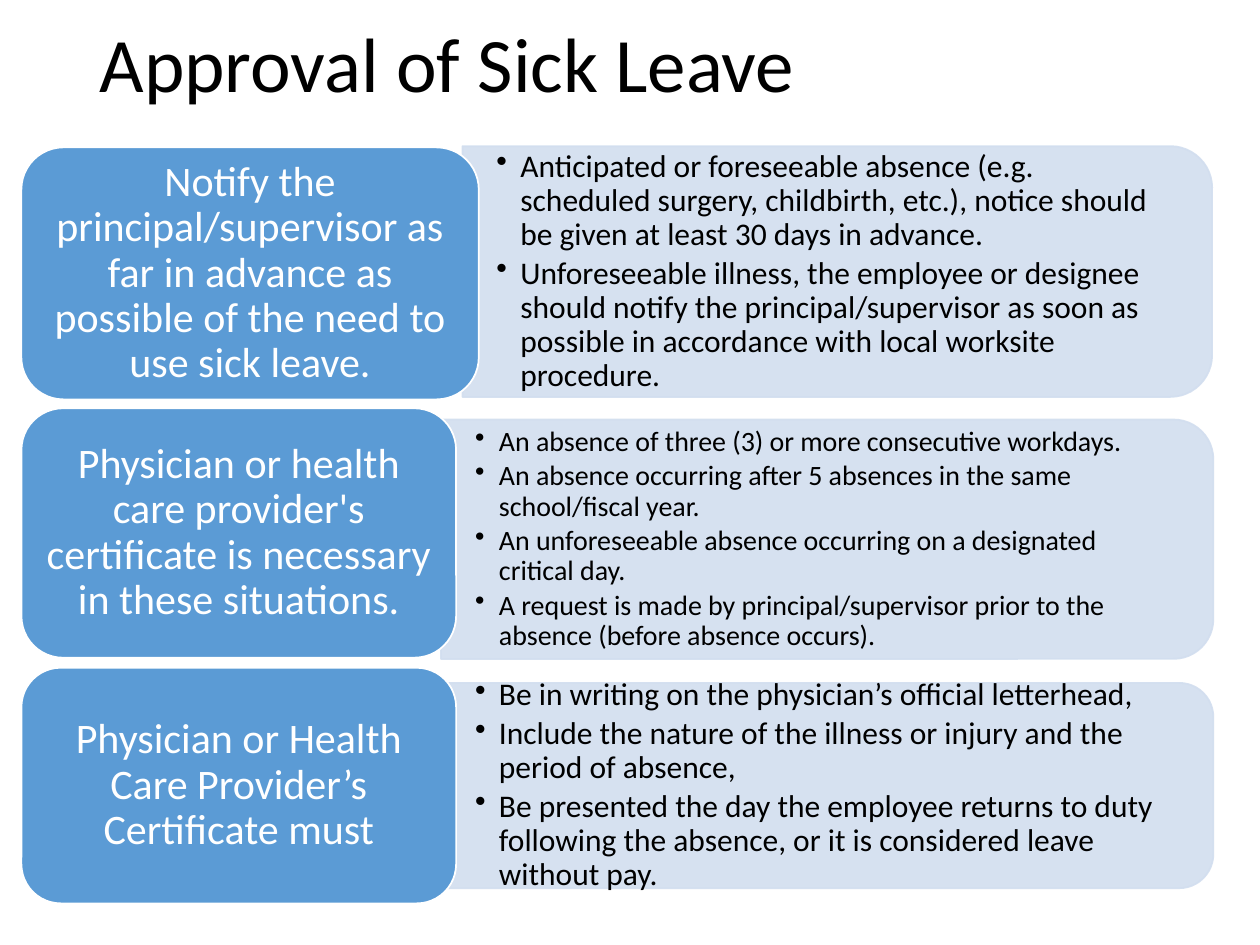
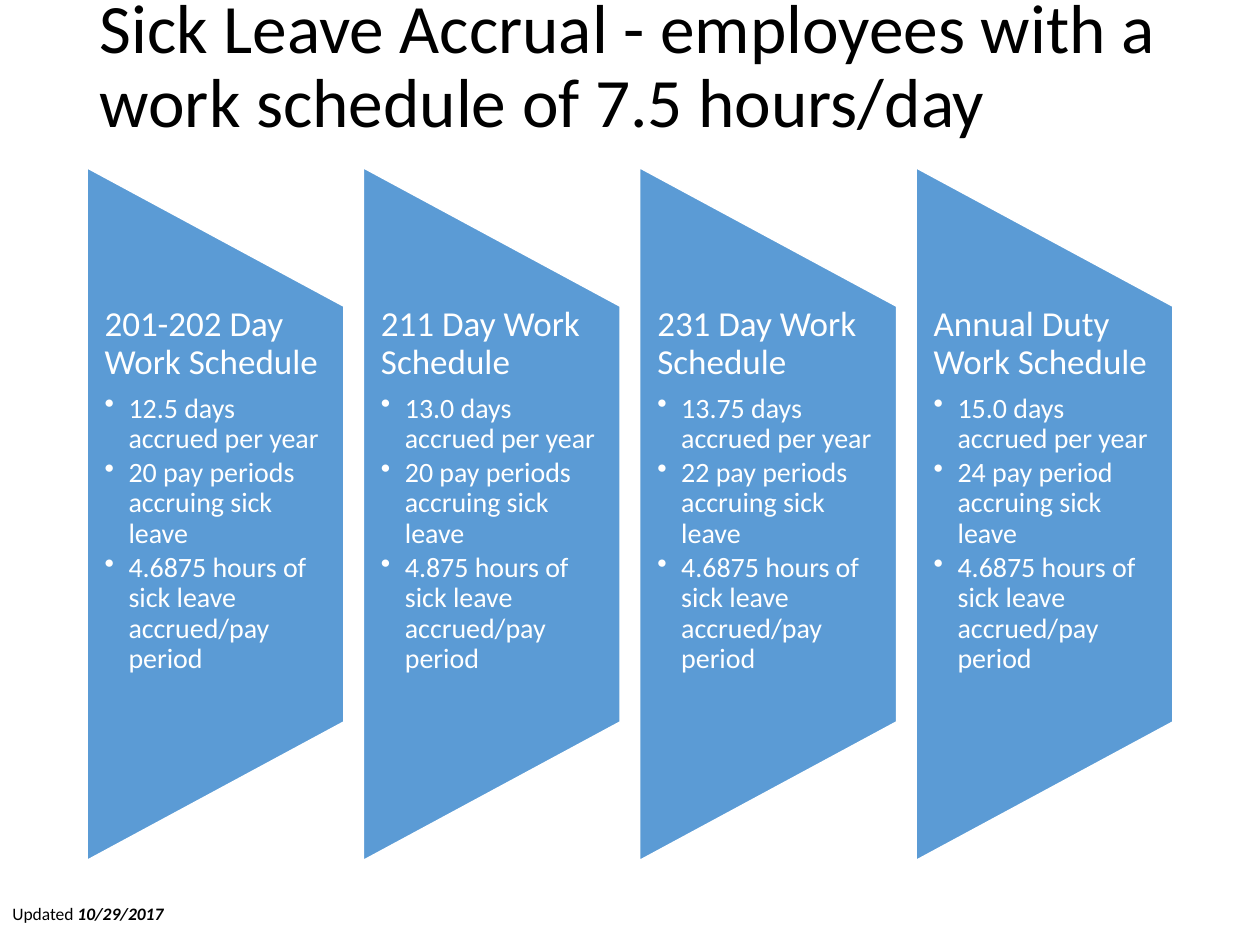
from lxml.etree import SubElement
from pptx import Presentation
from pptx.dml.color import RGBColor
from pptx.enum.shapes import MSO_SHAPE
from pptx.enum.text import MSO_ANCHOR, MSO_AUTO_SIZE, PP_ALIGN
from pptx.oxml.ns import qn
from pptx.util import Inches, Pt

# Content
RULES = [
    ("Notify the principal/supervisor as far in advance as possible of the need to use sick leave.", 18, [
        "Anticipated or foreseeable absence (e.g. scheduled surgery, childbirth, etc.), notice should be given at least 30 days in advance.",
        "Unforeseeable illness, the employee or designee should notify the principal/supervisor as soon as possible in accordance with local worksite procedure."]),
    ("Physician or health care provider's certificate is necessary in these situations.", 16, [
        "An absence of three (3) or more consecutive workdays.",
        "An absence occurring after 5 absences in the same school/fiscal year.",
        "An unforeseeable absence occurring on a designated critical day.",
        "A request is made by principal/supervisor prior to the absence (before absence occurs)."]),
    ("Physician or Health Care Provider’s Certificate must", 18, [
        "Be in writing on the physician’s official letterhead,",
        "Include the nature of the illness or injury and the period of absence,",
        "Be presented the day the employee returns to duty following the absence, or it is considered leave without pay."]),
]
PLANS = [
    ("201-202 Day Work Schedule", "12.5 days", "20 pay periods", "4.6875 hours"),
    ("211 Day Work Schedule", "13.0 days", "20 pay periods", "4.875 hours"),
    ("231 Day Work Schedule", "13.75 days", "22 pay periods", "4.6875 hours"),
    ("Annual Duty Work Schedule", "15.0 days", "24 pay period", "4.6875 hours"),
]
TAILS = ["accrued per year", "accruing sick leave", "of sick leave accrued/pay period"]

# Shared look
FONT = "Calibri"
HUES = {"blue": "5B9BD5", "pale": "D2DEEF", "white": "FFFFFF", "black": "000000"}
LEFT, WIDTH = 0.69, 8.62

# Places: card (left, top, width, height), then panel
SPOTS = [
    ((0.17, 1.17, 3.63, 2.0), (3.67, 1.16, 5.95, 1.99)),
    ((0.17, 3.24, 3.45, 1.98), (3.5, 3.33, 6.13, 1.9)),
    ((0.17, 5.3, 3.45, 1.87), (3.5, 5.42, 6.13, 1.63)),
]
TOP, WIDE, TALL = 1.33, 2.04, 5.5


def hue(name):
    return RGBColor.from_string(HUES[name])


def inch(*nums):
    return [Inches(n) for n in nums]


def add_run(para, text, size, tint, strong=False):
    run = para.add_run()
    run.text = text
    font = run.font
    font.name, font.size = FONT, Pt(size)
    font.color.rgb = hue(tint)
    if strong:
        font.bold = font.italic = True


def add_para(frame, text, size, tint, after=0.0, dot=False):
    """Fill the first empty paragraph, or append one."""
    para = frame.paragraphs[0]
    if para.runs:
        para = frame.add_paragraph()
    if dot:
        props = para._p.get_or_add_pPr()
        props.set("marL", str(Inches(0.19)))
        props.set("indent", str(-Inches(0.19)))
        SubElement(props, qn("a:buChar")).set("char", "•")
    para.line_spacing = 0.9
    para.space_after = Pt(size * after)
    add_run(para, text, size, tint)
    return para


def add_title(deck, text, size):
    slide = deck.slides.add_slide(deck.slide_layouts[5])
    title = slide.shapes.title
    title.left, title.top, title.width, title.height = inch(LEFT, 0.08, WIDTH, 0.92)
    frame = title.text_frame
    frame.auto_size = MSO_AUTO_SIZE.NONE
    frame.vertical_anchor = MSO_ANCHOR.MIDDLE
    add_para(frame, text, size, "black").alignment = PP_ALIGN.LEFT
    return slide


def add_form(slide, kind, place, fill, line, turn=0):
    """Add a shape that covers place once it is turned."""
    x, y, w, h = place
    if turn:
        x, y, w, h = x + (w - h) / 2, y + (h - w) / 2, h, w
    form = slide.shapes.add_shape(kind, *inch(x, y, w, h))
    form.rotation = turn
    form.shadow.inherit = False
    form.fill.solid()
    form.fill.fore_color.rgb = hue(fill)
    form.line.color.rgb = hue(line)
    form.line.width = Pt(1)
    return form


def add_box(slide, place, side, edge, anchor):
    frame = slide.shapes.add_textbox(*inch(*place)).text_frame
    frame.word_wrap = True
    frame.vertical_anchor = anchor
    frame.margin_left = frame.margin_right = Inches(side)
    frame.margin_top = frame.margin_bottom = Inches(edge)
    return frame


def add_rule(slide, rule, spots):
    head, size, items = rule
    card, panel = spots

    # Pale panel with its list
    form = add_form(slide, MSO_SHAPE.ROUND_2_SAME_RECTANGLE, panel, "pale", "pale", 90)
    for tint in form._element.spPr.iter(qn("a:srgbClr")):
        SubElement(tint, qn("a:alpha")).set("val", "90000")
    x, y, w, h = panel
    trim = h * 0.05
    frame = add_box(slide, (x, y + trim, w - trim, h - 2 * trim), 0.27, 0.14, MSO_ANCHOR.MIDDLE)
    for item in items:
        add_para(frame, item, size, "black", 0.15, True)

    # Blue card
    form = add_form(slide, MSO_SHAPE.ROUNDED_RECTANGLE, card, "blue", "white")
    frame = form.text_frame
    frame.word_wrap = True
    frame.vertical_anchor = MSO_ANCHOR.MIDDLE
    add_para(frame, head, 24, "white", 0.35).alignment = PP_ALIGN.CENTER


def add_plan(slide, plan, x):
    head, *facts = plan
    place = (x, TOP, WIDE, TALL)
    add_form(slide, MSO_SHAPE.FLOWCHART_MANUAL_OPERATION, place, "blue", "white", 270)
    inner = (x, TOP + TALL / 5, WIDE, TALL * 0.6)
    frame = add_box(slide, inner, 0.14, 0, MSO_ANCHOR.TOP)
    add_para(frame, head, 20, "white", 0.35)
    for fact, tail in zip(facts, TAILS):
        add_para(frame, f"{fact} {tail}", 16, "white", 0.15, True)


def main():
    deck = Presentation()
    deck.slide_width, deck.slide_height = inch(10, 7.5)

    # Approval rules
    slide = add_title(deck, "Approval of Sick Leave", 44)
    for rule, spots in zip(RULES, SPOTS):
        add_rule(slide, rule, spots)

    # Accrual by schedule
    slide = add_title(deck, "Sick Leave Accrual - employees with a work schedule of 7.5 hours/day", 39.6)
    step = (WIDTH - WIDE) / (len(PLANS) - 1)
    for i, plan in enumerate(PLANS):
        add_plan(slide, plan, LEFT + i * step)

    # Date of update
    frame = add_box(slide, (0, 7.12, 1.62, 0.27), 0.1, 0.05, MSO_ANCHOR.TOP)
    frame.auto_size = MSO_AUTO_SIZE.SHAPE_TO_FIT_TEXT
    para = frame.paragraphs[0]
    add_run(para, "Updated ", 10, "black")
    add_run(para, "10/29/2017", 10, "black", True)

    deck.save("out.pptx")


if __name__ == "__main__":
    main()
